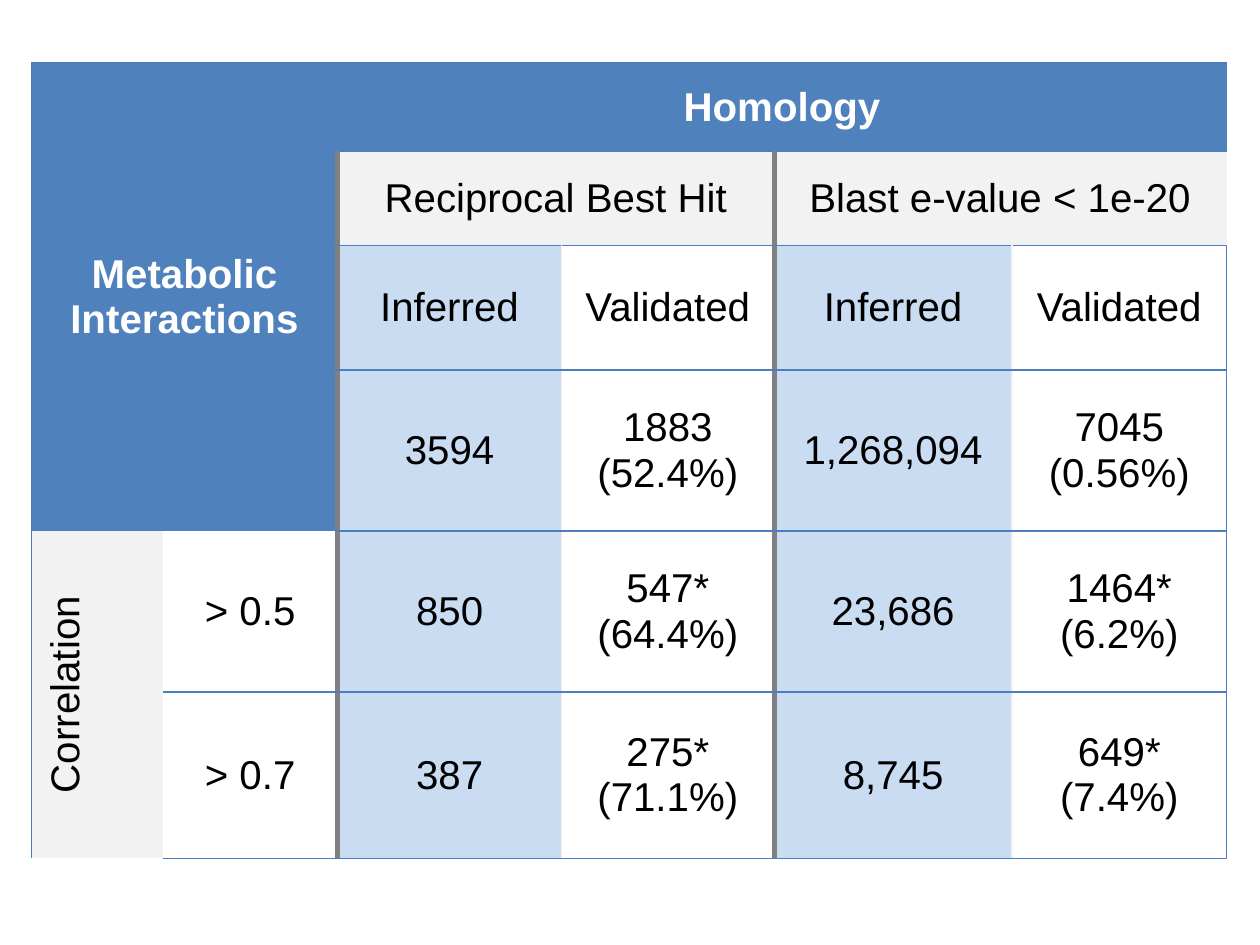
import pptx
import pptx.dml.color
import pptx.enum.text
import pptx.util
from lxml import etree

Pt = pptx.util.Pt
NS = "http://schemas.openxmlformats.org/drawingml/2006/main"
COLS = [75, 100, 128, 121.5, 136, 122.5]
ROWS = [50.5, 54, 71, 92, 92, 95]
BLUE, GREY, PALE, WHITE, BLACK = "4F81BD", "F2F2F2", "CADCF2", "FFFFFF", "000000"
THIN, THICK, FAINT = ("4B7EBC", 0.75), ("808080", 3), (GREY, 1)
RULES = [THIN, None, THICK, FAINT, THICK, FAINT, THIN]
HEADS = [
    (0, 0, 4, 2, "Metabolic Interactions", BLUE),
    (0, 2, 1, 4, "Homology", BLUE),
    (1, 2, 1, 2, "Reciprocal Best Hit", GREY),
    (1, 4, 1, 2, "Blast e-value < 1e-20", GREY),
    (4, 0, 2, 1, "Correlation", GREY),
    (4, 1, 1, 1, "> 0.5", WHITE),
    (5, 1, 1, 1, "> 0.7", WHITE),
]
DATA = [
    ["Inferred", "Validated", "Inferred", "Validated"],
    ["3594", "1883 (52.4%)", "1,268,094", "7045 (0.56%)"],
    ["850", "547*\n(64.4%)", "23,686", "1464*\n(6.2%)"],
    ["387", "275*\n(71.1%)", "8,745", "649*\n(7.4%)"],
]


def color(code):
    """Return the colour for a hex string."""
    return pptx.dml.color.RGBColor.from_string(code)


def border(cell, side, rule):
    """Draw one side of a cell, or clear it when there is no rule."""
    props = cell._tc.get_or_add_tcPr()
    line = etree.SubElement(props, f"{{{NS}}}ln{side}")
    if rule is None:
        etree.SubElement(line, f"{{{NS}}}noFill")
        return
    code, width = rule
    line.set("w", str(int(Pt(width))))
    fill = etree.SubElement(line, f"{{{NS}}}solidFill")
    etree.SubElement(fill, f"{{{NS}}}srgbClr", val=code)


def upright(row, edge):
    """Return the rule for a vertical edge in a row."""
    return None if row == 0 and edge == 2 else RULES[edge]


def frame(table, row, col, high, wide):
    """Draw the outer edges of a block of cells."""
    for r in range(row, row + high):
        for c in range(col, col + wide):
            cell = table.cell(r, c)
            border(cell, "L", upright(r, c) if c == col else None)
            border(cell, "R", upright(r, c + 1) if c == col + wide - 1 else None)
            border(cell, "T", THIN if r == row else None)
            border(cell, "B", THIN if r == row + high - 1 else None)


def write(cell, text, fill):
    """Fill a cell and set its centred text."""
    cell.fill.solid()
    cell.fill.fore_color.rgb = color(fill)
    cell.margin_left = cell.margin_right = Pt(12)
    cell.margin_top = cell.margin_bottom = Pt(6.5)
    cell.vertical_anchor = pptx.enum.text.MSO_ANCHOR.MIDDLE
    cell.text = text
    for para in cell.text_frame.paragraphs:
        para.alignment = pptx.enum.text.PP_ALIGN.CENTER
        para.font.name = "Arial"
        para.font.size = Pt(23)
        para.font.bold = fill == BLUE
        para.font.color.rgb = color(WHITE if fill == BLUE else BLACK)


def block(table, row, col, high, wide, text, fill):
    """Place a block of one or more merged cells."""
    cell = table.cell(row, col)
    frame(table, row, col, high, wide)
    if high * wide > 1:
        cell.merge(table.cell(row + high - 1, col + wide - 1))
    write(cell, text, fill)


def grid(slide):
    """Add the empty table with its column and row sizes."""
    shape = slide.shapes.add_table(
        len(ROWS), len(COLS), Pt(18), Pt(36), Pt(sum(COLS)), Pt(sum(ROWS)))
    table = shape.table
    table.first_row = table.horz_banding = False
    for col, width in zip(table.columns, COLS):
        col.width = Pt(width)
    for row, height in zip(table.rows, ROWS):
        row.height = Pt(height)
    return table


def main():
    """Build the slide and save it."""
    deck = pptx.Presentation()
    deck.slide_width, deck.slide_height = Pt(720), Pt(540)
    slide = deck.slides.add_slide(deck.slide_layouts[6])
    table = grid(slide)
    for head in HEADS:
        block(table, *head)
    for row, texts in enumerate(DATA, 2):
        for col, text in enumerate(texts, 2):
            block(table, row, col, 1, 1, text, WHITE if col % 2 else PALE)
    table.cell(4, 0)._tc.get_or_add_tcPr().set("vert", "vert270")
    deck.save("out.pptx")


if __name__ == "__main__":
    main()
